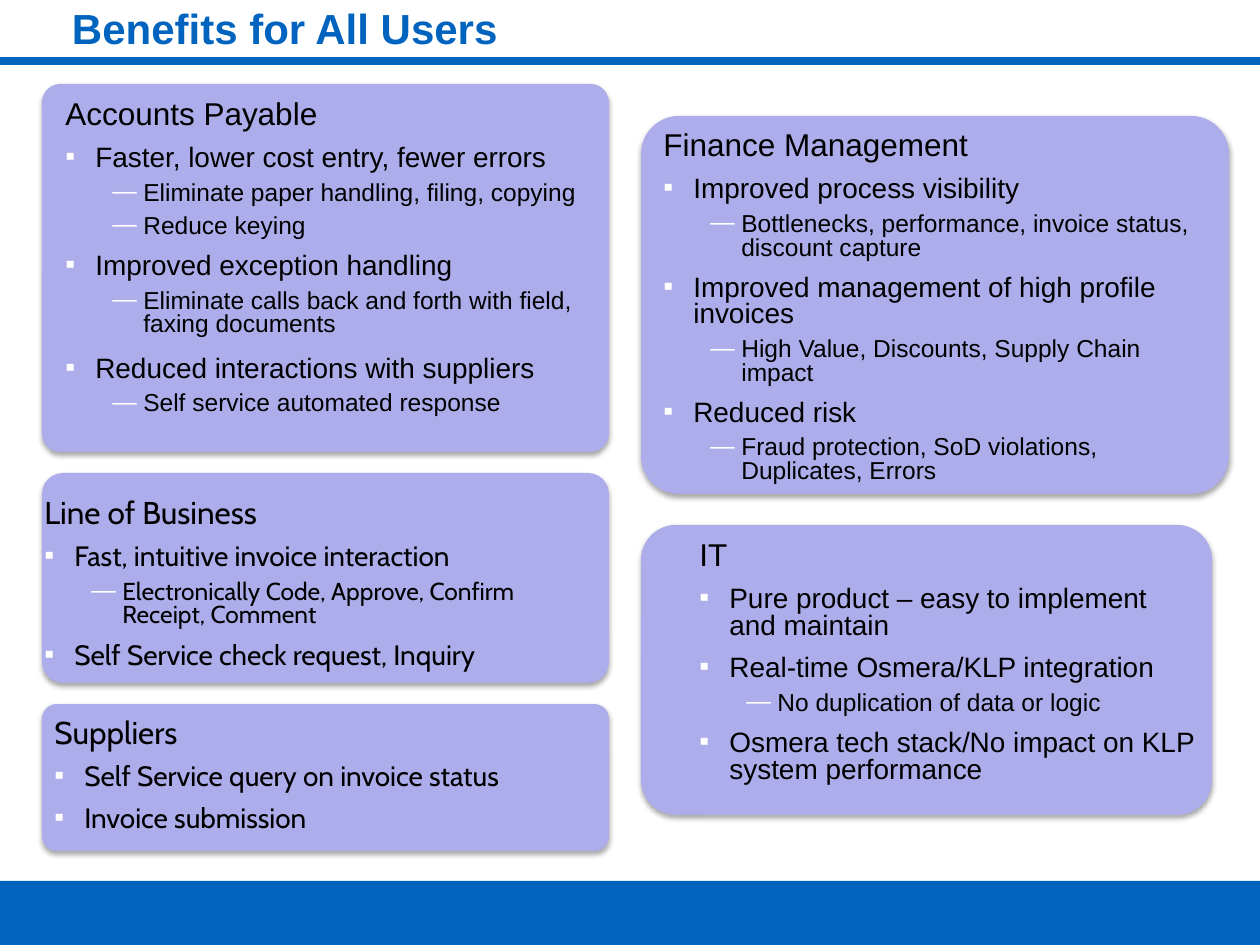
import pptx
import pptx.dml.color
import pptx.enum.shapes
import pptx.enum.text
import pptx.oxml
import pptx.oxml.ns
import pptx.util

RGB = pptx.dml.color.RGBColor
SHAPE = pptx.enum.shapes.MSO_SHAPE
BLUE = RGB(0x00, 0x64, 0xBE)
LILAC = RGB(0xAD, 0xAD, 0xEB)
BLACK = RGB(0, 0, 0)
WHITE = RGB(0xFF, 0xFF, 0xFF)

PX = 914400 / 126
WIDTH, HEIGHT = 1260, 945
TITLE = "Benefits for All Users"

# style: size, space before, left margin, indent, bullet
STYLES = {
    "head": (18, 0, 0, 0, None),
    "point": (16, 8.5, 30, -30, "▪"),
    "spaced": (16, 11, 30, -30, "▪"),
    "detail": (14, 5.4, 78, -31, "—"),
}

# card box, corner, text box, font, paragraphs
CARDS = [
    ((42, 84, 567, 368), 0.05, (53, 95, 557, 352), "Arial", [
        ("head", "Accounts Payable"),
        ("point", "Faster, lower cost entry, fewer errors"),
        ("detail", "Eliminate paper handling, filing, copying"),
        ("detail", "Reduce keying"),
        ("point", "Improved exception handling"),
        ("detail", "Eliminate calls back and forth with field,\nfaxing documents"),
        ("spaced", "Reduced interactions with suppliers"),
        ("detail", "Self service automated response"),
    ]),
    ((641, 116, 588, 378), 0.1, (651, 126, 577, 378), "Arial", [
        ("head", "Finance Management"),
        ("point", "Improved process visibility"),
        ("detail", "Bottlenecks, performance, invoice status, discount capture"),
        ("point", "Improved management of high profile invoices"),
        ("detail", "High Value, Discounts, Supply Chain impact"),
        ("point", "Reduced risk"),
        ("detail", "Fraud protection, SoD violations, Duplicates, Errors"),
    ]),
    ((42, 473, 567, 210), 0.1, (32, 494, 580, 189), "Cabin", [
        ("head", "Line of Business"),
        ("point", "Fast, intuitive invoice interaction"),
        ("detail", "Electronically Code, Approve, Confirm Receipt, Comment"),
        ("point", "Self Service check request, Inquiry"),
    ]),
    ((42, 704, 567, 147), 0.1, (42, 714, 567, 131), "Cabin", [
        ("head", "Suppliers"),
        ("point", "Self Service query on invoice status"),
        ("point", "Invoice submission"),
    ]),
    ((641, 525, 571, 290), 0.12, (687, 536, 573, 265), "Arial", [
        ("head", "IT"),
        ("point", "Pure product – easy to implement\nand maintain"),
        ("point", "Real-time Osmera/KLP integration"),
        ("detail", "No duplication of data or logic"),
        ("point", "Osmera tech stack/No impact on KLP\nsystem performance"),
    ]),
]


def px(n):
    return pptx.util.Emu(round(n * PX))


def add_xml(parent, tag, body="", attrs=""):
    ns = pptx.oxml.ns.nsdecls("a")
    parent.append(pptx.oxml.parse_xml(f"<a:{tag} {ns} {attrs}>{body}</a:{tag}>"))


def add_filled(slide, kind, box, color):
    sp = slide.shapes.add_shape(kind, *map(px, box))
    sp.shadow.inherit = False
    sp.fill.solid()
    sp.fill.fore_color.rgb = color
    sp.line.fill.background()
    return sp


def add_card(slide, box, corner):
    sp = add_filled(slide, SHAPE.ROUNDED_RECTANGLE, box, LILAC)
    sp.adjustments[0] = corner
    effects = sp._element.spPr.find(pptx.oxml.ns.qn("a:effectLst"))
    add_xml(effects, "outerShdw",
            '<a:srgbClr val="000000"><a:alpha val="35000"/></a:srgbClr>',
            'blurRad="40000" dist="23000" dir="5400000" rotWithShape="0"')


def add_text(slide, box, font, items):
    tf = slide.shapes.add_textbox(*map(px, box)).text_frame
    tf.word_wrap = True
    for i, (style, text) in enumerate(items):
        size, before, margin, indent, bullet = STYLES[style]
        p = tf.add_paragraph() if i else tf.paragraphs[0]
        p.text = text
        if bullet:
            p.level = int(style == "detail")
            pPr = p._p.get_or_add_pPr()
            pPr.set("marL", str(px(margin)))
            pPr.set("indent", str(px(indent)))
            add_xml(pPr, "buClr", f'<a:srgbClr val="{WHITE}"/>')
            add_xml(pPr, "buFont", attrs='typeface="Arial"')
            add_xml(pPr, "buChar", attrs=f'char="{bullet}"')
        p.line_spacing = 0.8
        p.space_before = pptx.util.Pt(before)
        p.font.size = pptx.util.Pt(size)
        p.font.name = font
        p.font.color.rgb = BLACK


def add_title(slide):
    sp = slide.shapes.title
    sp.left, sp.top, sp.width, sp.height = map(px, (32, 0, 1197, 63))
    tf = sp.text_frame
    tf.vertical_anchor = pptx.enum.text.MSO_ANCHOR.BOTTOM
    tf.margin_left, tf.margin_bottom = px(40), px(9)
    p = tf.paragraphs[0]
    p.text = TITLE
    p.alignment = pptx.enum.text.PP_ALIGN.LEFT
    p.line_spacing = 0.9
    p.font.size = pptx.util.Pt(24)
    p.font.name = "Arial"
    p.font.bold = True
    p.font.color.rgb = BLUE


def main():
    prs = pptx.Presentation()
    prs.slide_width, prs.slide_height = px(WIDTH), px(HEIGHT)
    slide = prs.slides.add_slide(prs.slide_layouts[5])
    add_title(slide)
    rule = slide.shapes.add_connector(
        pptx.enum.shapes.MSO_CONNECTOR.STRAIGHT, *map(px, (0, 61, WIDTH, 61)))
    rule.line.color.rgb = BLUE
    rule.line.width = pptx.util.Pt(4.5)
    add_xml(rule._element.spPr, "effectLst")
    add_filled(slide, SHAPE.RECTANGLE, (0, 881, WIDTH, 64), BLUE)
    for box, corner, text_box, font, items in CARDS:
        add_card(slide, box, corner)
        add_text(slide, text_box, font, items)
    prs.save("out.pptx")


if __name__ == "__main__":
    main()
